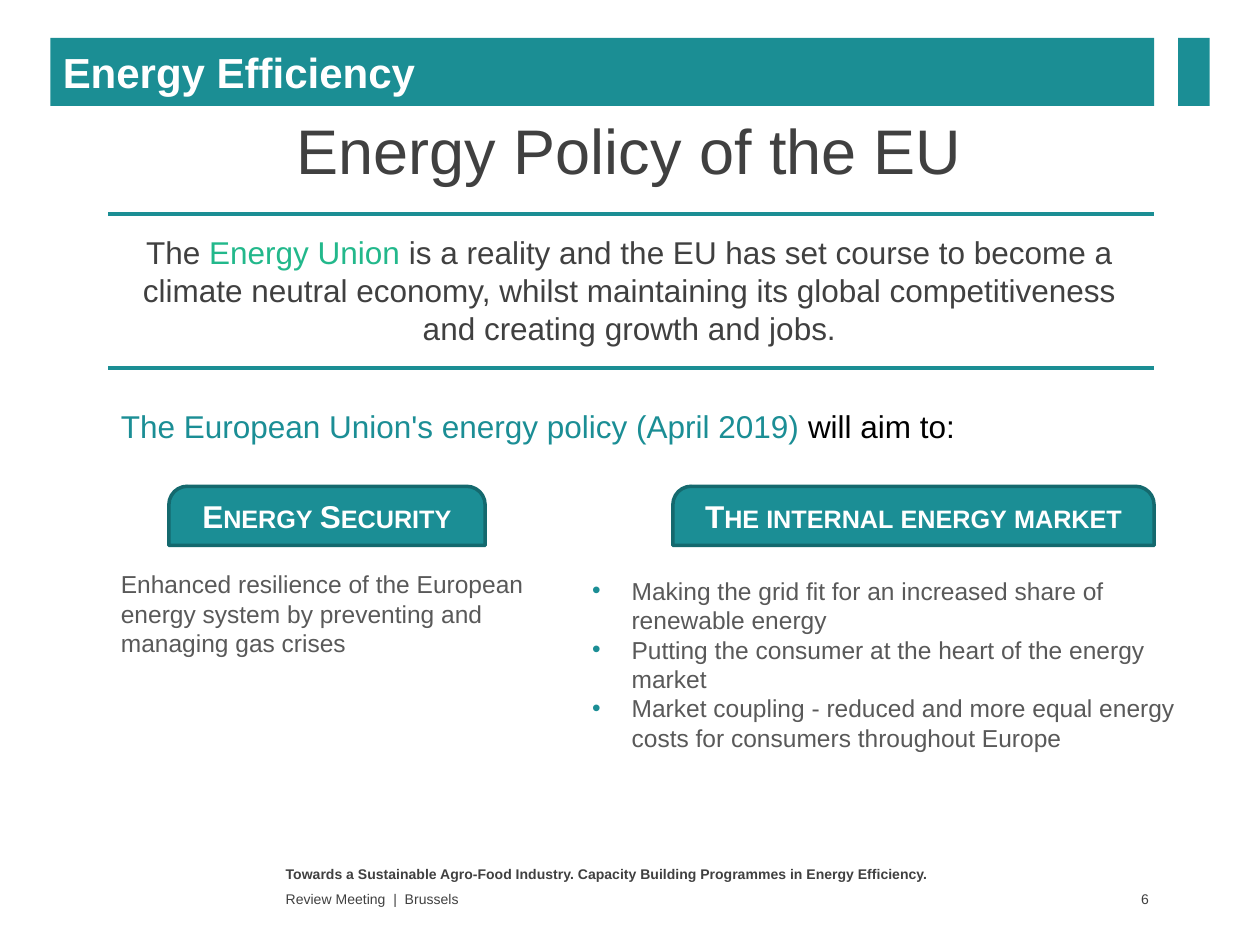
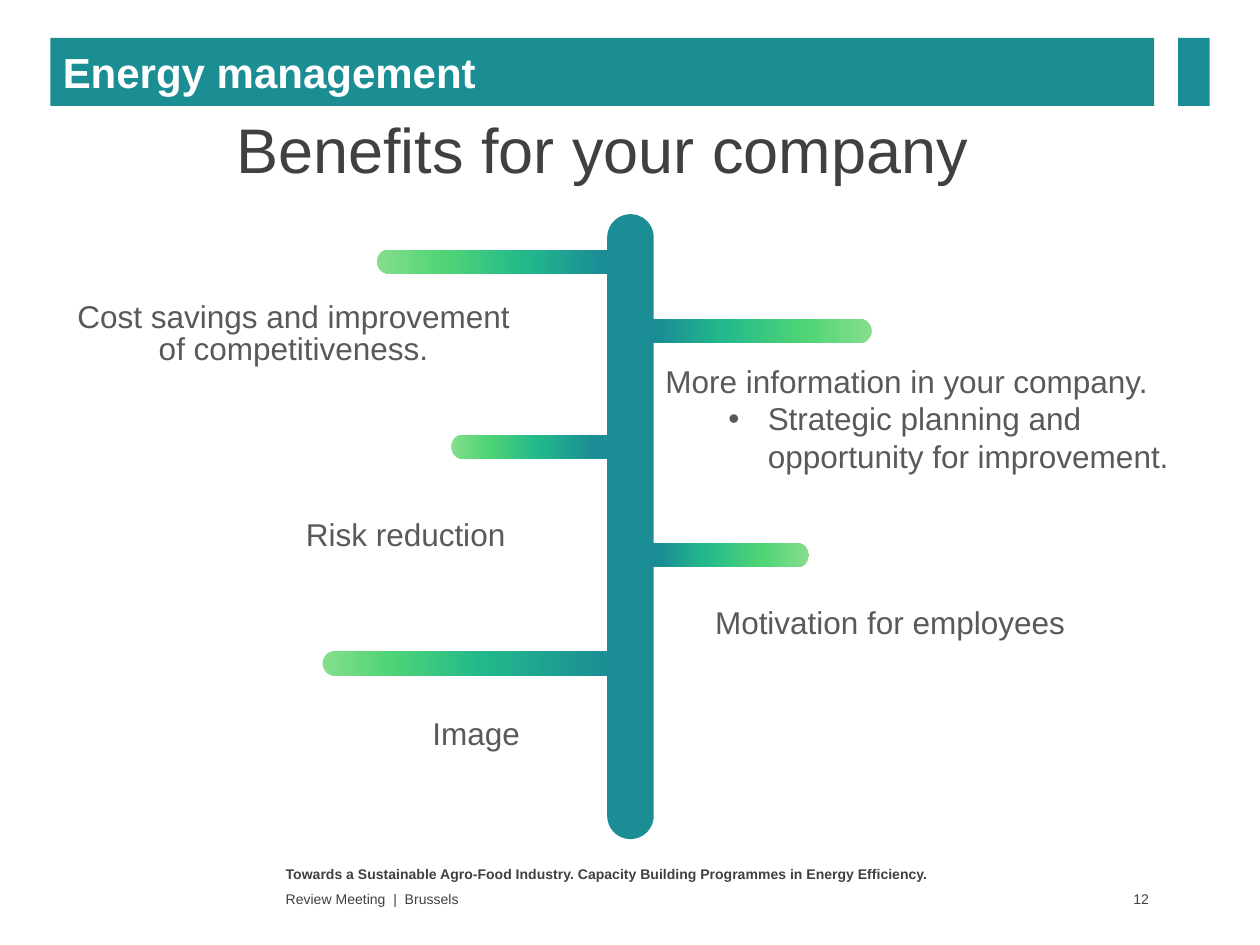
from dataclasses import dataclass
from typing import NamedTuple, Optional

from lxml import etree
from pptx import Presentation
from pptx.dml.color import RGBColor
from pptx.enum import shapes, text
from pptx.oxml import ns
from pptx.util import Pt

# Shared look
FONT = "Arial"
BAND_TEAL, TEAL, DARK_TEAL, GREEN = "1B8E94", "1B8E95", "14696E", "22B88B"
WHITE, BLACK, CHARCOAL, GREY = "FFFFFF", "000000", "404040", "595959"
BRANCH_COLORS = ("86DE8D", "4FD476", GREEN, TEAL)
LEFT, CENTER, RIGHT = text.PP_ALIGN.LEFT, text.PP_ALIGN.CENTER, text.PP_ALIGN.RIGHT
TOP, MIDDLE = text.MSO_ANCHOR.TOP, text.MSO_ANCHOR.MIDDLE
TITLE_AND_CONTENT = 1
BULLET_INDENT = 22.5


class Box(NamedTuple):
    left: float
    top: float
    width: float
    height: float


class Phrase(NamedTuple):
    words: str
    color: str


@dataclass(frozen=True)
class Style:
    size: float
    color: str = GREY
    bold: bool = False
    align: text.PP_ALIGN = LEFT
    line_spacing: Optional[float] = None
    small_caps: bool = False


@dataclass(frozen=True)
class Label:
    box: Box
    phrases: tuple[Phrase, ...]
    style: Style


@dataclass(frozen=True)
class Tab:
    box: Box
    words: str


@dataclass(frozen=True)
class Branch:
    left: float
    top: float
    width: float
    stops: tuple[int, ...]
    rotation: int = 0


HEADING = Style(36, CHARCOAL, align=CENTER)
BAND = Style(24, WHITE, bold=True)
FOOTER = Style(8, CHARCOAL)
FOOTER_BOLD = Style(8, CHARCOAL, bold=True)
PAGE_NUMBER = Style(8, CHARCOAL, align=RIGHT)
LEAD = Style(18)
LEAD_CENTERED = Style(18, align=CENTER)
TAB = Style(18, WHITE, bold=True, align=CENTER, small_caps=True)
DETAIL = Style(14)
BENEFIT = Style(18, align=CENTER, line_spacing=12)


# Helpers
def rgb(color: str) -> RGBColor:
    return RGBColor.from_string(color)


def points(box: Box) -> tuple:
    return tuple(Pt(length) for length in box)


def place(shape, box: Box) -> None:
    shape.left, shape.top, shape.width, shape.height = points(box)


def format_run(run, style: Style, color: str) -> None:
    run.font.name = FONT
    run.font.size = Pt(style.size)
    run.font.bold = style.bold
    run.font.color.rgb = rgb(color)
    if style.small_caps:
        run._r.get_or_add_rPr().set("cap", "small")


def format_paragraph(paragraph, style: Style) -> None:
    paragraph.alignment = style.align
    paragraph.space_before = Pt(0)
    if style.line_spacing:
        paragraph.line_spacing = Pt(style.line_spacing)
    for run in paragraph.runs:
        format_run(run, style, style.color)


def set_frame(shape, anchor=TOP, auto_size=text.MSO_AUTO_SIZE.NONE):
    frame = shape.text_frame
    frame.word_wrap = True
    frame.auto_size = auto_size
    frame.vertical_anchor = anchor
    return frame


def write(shape, words: str, style: Style, anchor=TOP):
    frame = set_frame(shape, anchor)
    frame.text = words
    for paragraph in frame.paragraphs:
        format_paragraph(paragraph, style)
    return frame


def set_bullet(paragraph, margin: float, color: Optional[str] = None) -> None:
    properties = paragraph._p.get_or_add_pPr()
    properties.set("marL", str(Pt(margin)))
    properties.set("indent", str(-Pt(BULLET_INDENT)))
    if color:
        bullet_color = etree.SubElement(properties, ns.qn("a:buClr"))
        etree.SubElement(bullet_color, ns.qn("a:srgbClr"), val=color)
    etree.SubElement(properties, ns.qn("a:buFont"), typeface=FONT)
    etree.SubElement(properties, ns.qn("a:buChar"), char="•")


def remove_bullet(paragraph) -> None:
    properties = paragraph._p.get_or_add_pPr()
    properties.set("marL", "0")
    properties.set("indent", "0")
    etree.SubElement(properties, ns.qn("a:buNone"))


def add_block(slide, kind, box: Box, fill: str, line: Optional[str] = None):
    shape = slide.shapes.add_shape(kind, *points(box))
    shape.shadow.inherit = False
    shape.fill.solid()
    shape.fill.fore_color.rgb = rgb(fill)
    if line:
        shape.line.color.rgb = rgb(line)
        shape.line.width = Pt(2)
    else:
        shape.line.fill.background()
    return shape


def add_text(slide, box: Box, words: str, style: Style, anchor=TOP):
    return write(slide.shapes.add_textbox(*points(box)), words, style, anchor)


def add_label(slide, label: Label) -> None:
    shape = slide.shapes.add_textbox(*points(label.box))
    frame = set_frame(shape, auto_size=text.MSO_AUTO_SIZE.SHAPE_TO_FIT_TEXT)
    paragraph = frame.paragraphs[0]
    format_paragraph(paragraph, label.style)
    for phrase in label.phrases:
        run = paragraph.add_run()
        run.text = phrase.words
        format_run(run, label.style, phrase.color)


def add_rule(slide, top: float) -> None:
    ends = (Pt(length) for length in (62, top, 659.5, top))
    rule = slide.shapes.add_connector(shapes.MSO_CONNECTOR.STRAIGHT, *ends)
    rule.line.color.rgb = rgb(BAND_TEAL)
    rule.line.width = Pt(2.25)
    etree.SubElement(rule._element.spPr, ns.qn("a:effectLst"))


def add_tab(slide, tab: Tab) -> None:
    kind = shapes.MSO_SHAPE.ROUND_2_SAME_RECTANGLE
    shape = add_block(slide, kind, tab.box, TEAL, DARK_TEAL)
    shape.adjustments[0] = 0.311
    frame = write(shape, tab.words, TAB, MIDDLE)
    frame.word_wrap = False
    frame.margin_top, frame.margin_bottom = Pt(0), Pt(2.5)


def add_pill(slide, box: Box):
    pill = add_block(slide, shapes.MSO_SHAPE.ROUNDED_RECTANGLE, box, TEAL)
    pill.adjustments[0] = 0.5
    return pill


def add_branch(slide, branch: Branch) -> None:
    pill = add_pill(slide, Box(branch.left, branch.top, branch.width, 13.9))
    pill.rotation = branch.rotation
    gradient = etree.Element(ns.qn("a:gradFill"), rotWithShape="1")
    stop_list = etree.SubElement(gradient, ns.qn("a:gsLst"))
    for percent, color in zip(branch.stops, BRANCH_COLORS):
        stop = etree.SubElement(stop_list, ns.qn("a:gs"), pos=str(percent * 1000))
        etree.SubElement(stop, ns.qn("a:srgbClr"), val=color)
    etree.SubElement(gradient, ns.qn("a:lin"), ang="0", scaled="0")
    properties = pill._element.spPr
    properties.replace(properties.find(ns.qn("a:solidFill")), gradient)


def add_page(presentation, topic: str, heading: str, heading_box: Box, number: int):
    """Add a slide with its heading, top band and footer."""
    slide = presentation.slides.add_slide(presentation.slide_layouts[TITLE_AND_CONTENT])
    place(slide.shapes.title, heading_box)
    write(slide.shapes.title, heading, HEADING, MIDDLE)

    rectangle = shapes.MSO_SHAPE.RECTANGLE
    band = add_block(slide, rectangle, Box(28.8, 21.6, 630.7, 38.9), BAND_TEAL)
    write(band, topic, BAND, MIDDLE)
    add_block(slide, rectangle, Box(673.2, 21.6, 18, 38.9), TEAL)

    add_text(slide, Box(156.2, 491, 396, 15),
             "Towards a Sustainable Agro-Food Industry. "
             "Capacity Building Programmes in Energy Efficiency.", FOOTER_BOLD)
    add_text(slide, Box(156.2, 506.9, 396, 13.7), "Review Meeting  |  Brussels",
             FOOTER, MIDDLE)
    page = add_text(slide, Box(619.2, 506.2, 40.3, 14.4), str(number),
                    PAGE_NUMBER, MIDDLE)
    page.margin_right = Pt(2.9)
    return slide


# Slide content
POLICY_LABELS = (
    Label(Box(64.8, 129.6, 589.7, 72.7), (
        Phrase("The ", CHARCOAL), Phrase("Energy Union ", GREEN),
        Phrase("is a reality and the EU has set course to become a climate neutral "
               "economy, whilst maintaining its global competitiveness and creating "
               "growth and jobs.", CHARCOAL)), LEAD_CENTERED),
    Label(Box(62, 229, 493.2, 28.8), (
        Phrase("The European Union's energy policy (April 2019) ", TEAL),
        Phrase("will aim to:", BLACK)), LEAD),
    Label(Box(62, 321.8, 244.8, 74.9), (
        Phrase("Enhanced resilience of the European energy system by preventing and "
               "managing gas crises", GREY),), DETAIL),
)
POLICY_TABS = (
    Tab(Box(96.5, 277.9, 180.7, 33.8), "Energy Security"),
    Tab(Box(384.5, 277.9, 275, 33.8), "The internal energy market"),
)
MARKET_AIMS = (
    "Making the grid fit for an increased share of renewable energy",
    "Putting the consumer at the heart of the energy market",
    "Market coupling - reduced and more equal energy costs for consumers "
    "throughout Europe",
)
BRANCHES = (
    Branch(215.3, 142.6, 138.2, (0, 28, 62, 92)),
    Branch(257.8, 248.4, 95.8, (0, 22, 52, 84)),
    Branch(184.3, 372.2, 175.7, (0, 22, 52, 92)),
    Branch(360, 182.2, 138.2, (0, 28, 62, 88), 180),
    Branch(365.8, 310.3, 96.5, (0, 28, 62, 88), 180),
)
BENEFITS = (
    Label(Box(28.8, 169.9, 277.9, 44.6),
          (Phrase("Cost savings and improvement of competitiveness.", GREY),),
          Style(18, align=CENTER, line_spacing=18)),
    Label(Box(151.9, 300.2, 159.8, 21.6), (Phrase("Risk reduction", GREY),), BENEFIT),
    Label(Box(382.3, 350.6, 252.7, 21.6),
          (Phrase("Motivation for employees", GREY),), BENEFIT),
    Label(Box(192.2, 414, 159.8, 21.6), (Phrase("Image", GREY),), BENEFIT),
)


def build_policy(presentation) -> None:
    slide = add_page(presentation, "Energy Efficiency", "Energy Policy of the EU",
                     Box(28.8, 74.2, 661.7, 22.3), 6)
    for top in (122.4, 210.2):
        add_rule(slide, top)
    for label in POLICY_LABELS:
        add_label(slide, label)
    for tab in POLICY_TABS:
        add_tab(slide, tab)
    aims = slide.placeholders[1]
    place(aims, Box(331.2, 325.4, 360, 108.7))
    for paragraph in write(aims, "\n".join(MARKET_AIMS), DETAIL).paragraphs:
        set_bullet(paragraph, BULLET_INDENT, TEAL)


def build_benefits(presentation) -> None:
    slide = add_page(presentation, "Energy management", "Benefits for your company",
                     Box(28.8, 60.5, 630.7, 48.2), 12)
    for branch in BRANCHES:
        add_branch(slide, branch)
    add_pill(slide, Box(347, 122.4, 26.6, 357.1))  # trunk
    for benefit in BENEFITS:
        add_label(slide, benefit)
    information = slide.placeholders[1]
    place(information, Box(373, 206.6, 306.7, 69.1))
    frame = write(information, "More information in your company.\n"
                  "Strategic planning and opportunity for improvement.", LEAD)
    lead, planning = frame.paragraphs
    remove_bullet(lead)
    lead.line_spacing = Pt(18)
    planning.level = 1
    set_bullet(planning, 58.5)


def main() -> None:
    presentation = Presentation()
    presentation.slide_width, presentation.slide_height = Pt(720), Pt(540)
    build_policy(presentation)
    build_benefits(presentation)
    presentation.save("out.pptx")


if __name__ == "__main__":
    main()
